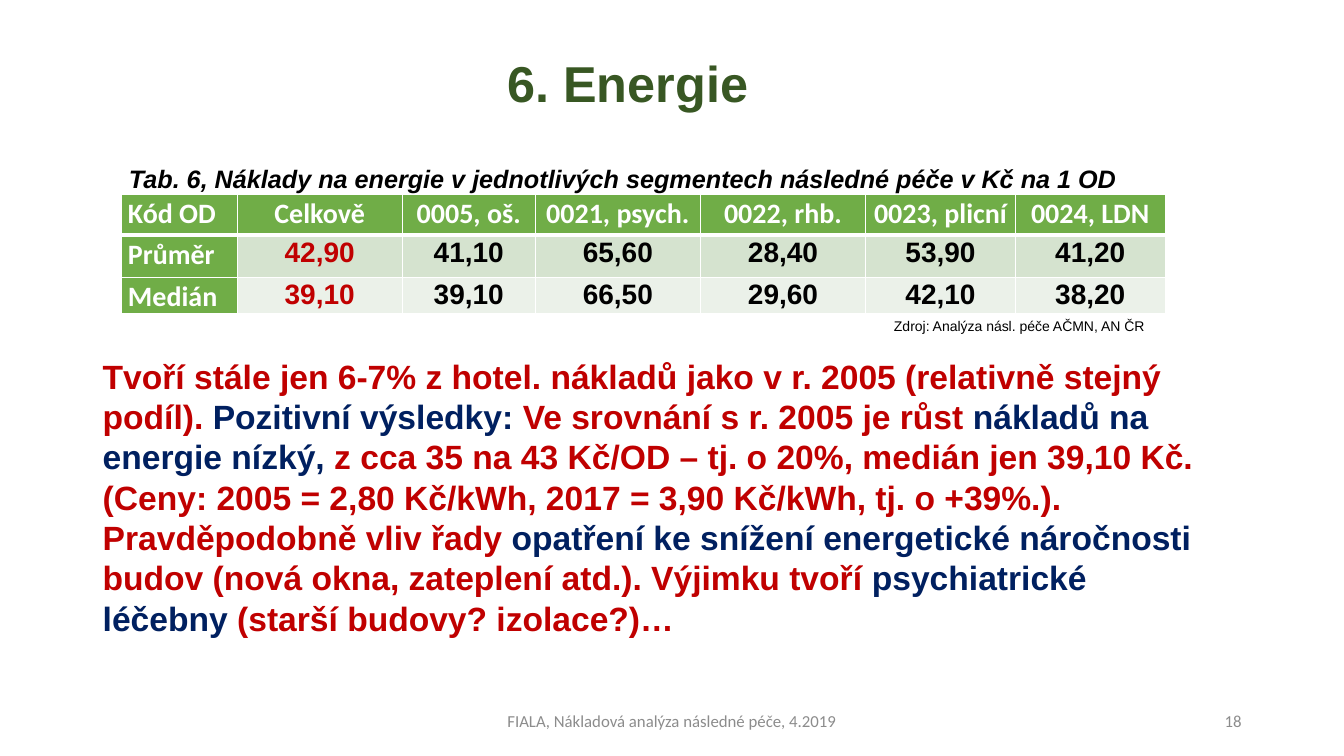
from pptx import Presentation
from pptx.dml.color import RGBColor
from pptx.enum.text import MSO_ANCHOR, PP_ALIGN
from pptx.oxml import parse_xml
from pptx.oxml.ns import nsdecls
from pptx.util import Pt

GREEN, RED, NAVY, BLACK, WHITE, GREY = "70AD47", "C00000", "002060", "000000", "FFFFFF", "8C8C8C"


def colour(value):
    return RGBColor.from_string(value)


def write(para, spans, size, align=PP_ALIGN.LEFT, **style):
    para.alignment = align
    for text, shade in spans:
        span = para.add_run()
        span.text = text
        span.font.color.rgb = colour(shade)
        values = {"name": "Arial", "size": Pt(size), "bold": False, "italic": False} | style
        for name, value in values.items():
            setattr(span.font, name, value)


deck = Presentation()
deck.slide_width, deck.slide_height = Pt(960), Pt(540)
page = deck.slides.add_slide(deck.slide_layouts[5])

title = page.shapes.title
placement = {"left": 47, "top": 29, "width": 803, "height": 65}
for name, value in placement.items():
    setattr(title, name, Pt(value))
title.text_frame.vertical_anchor = MSO_ANCHOR.MIDDLE
heading = title.text_frame.paragraphs[0]
heading.line_spacing = 0.9
write(heading, [("6. Energie", "385723")], 36, PP_ALIGN.CENTER, bold=True)

rows = [
    ["Kód OD", "Celkově", "0005, oš.", "0021, psych.", "0022, rhb.", "0023, plicní", "0024, LDN"],
    ["Průměr", "42,90", "41,10", "65,60", "28,40", "53,90", "41,20"],
    ["Medián", "39,10", "39,10", "66,50", "29,60", "42,10", "38,20"],
]
column_widths = [83, 118, 95, 118, 118, 107, 107]
row_heights = [29, 30, 25]
row_fills = [GREEN, "D5E3CF", "EBF1E9"]
table = page.shapes.add_table(
    3, 7, Pt(86.4), Pt(139), Pt(sum(column_widths)), Pt(sum(row_heights))
).table
for column, width in zip(table.columns, column_widths):
    column.width = Pt(width)
for row, height in zip(table.rows, row_heights):
    row.height = Pt(height)

cell_margins = {"margin_left": 5, "margin_right": 5, "margin_top": 0, "margin_bottom": 0}
for r, values in enumerate(rows):
    for c, value in enumerate(values):
        cell = table.cell(r, c)
        for name, margin in cell_margins.items():
            setattr(cell, name, Pt(margin))
        label = r == 0 or c == 0
        shade = WHITE if label else RED if c == 1 else BLACK
        para = cell.text_frame.paragraphs[0]
        para.line_spacing = 1.07
        write(para, [(value, shade)], 20, PP_ALIGN.CENTER if c else PP_ALIGN.LEFT,
              bold=True, name="Calibri" if label else "Arial")
        properties = cell._tc.get_or_add_tcPr()
        for side in "LRTB":
            thick = (r == 0 and side == "B") or (r == 1 and side == "T")
            properties.append(parse_xml(
                f'<a:ln{side} {nsdecls("a")} w="{Pt(3 if thick else 1)}"><a:solidFill>'
                f'<a:srgbClr val="{WHITE}"/></a:solidFill></a:ln{side}>'
            ))
        cell.fill.solid()
        cell.fill.fore_color.rgb = colour(GREEN if label else row_fills[r])

commentary = [
    [("Tvoří stále jen 6-7% z hotel. nákladů jako v r. 2005 (relativně stejný", RED)],
    [("podíl). ", RED), ("Pozitivní výsledky: ", NAVY),
     ("Ve srovnání s r. 2005 je růst ", RED), ("nákladů na", NAVY)],
    [("energie nízký,", NAVY),
     (" z cca 35 na 43 Kč/OD – tj. o 20%, medián jen 39,10 Kč. "
      "(Ceny: 2005 = 2,80 Kč/kWh, 2017 = 3,90 Kč/kWh, tj. o +39%.). "
      "Pravděpodobně vliv řady ", RED),
     ("opatření ke snížení energetické náročnosti", NAVY),
     (" budov (nová okna, zateplení atd.). Výjimku tvoří ", RED),
     ("psychiatrické léčebny", NAVY), (" (starší budovy? izolace?)…", RED)],
]
caption = "Tab. 6, Náklady na energie v jednotlivých segmentech následné péče v Kč na 1 OD"
source = "Zdroj: Analýza násl. péče AČMN, AN ČR"
footer = "FIALA, Nákladová analýza následné péče, 4.2019"
top, middle = MSO_ANCHOR.TOP, MSO_ANCHOR.MIDDLE
boxes = [
    ((85, 113, 746, 29), top, [[(caption, BLACK)]], {"size": 18, "bold": True, "italic": True}),
    ((631.5, 223.5, 200, 19.5), top, [[(source, BLACK)]],
     {"size": 10, "align": PP_ALIGN.JUSTIFY}),
    ((66.3, 250.5, 811.5, 211), top, commentary, {"size": 24, "bold": True}),
    ((318, 500.5, 324, 29), middle, [[(footer, GREY)]],
     {"size": 12, "align": PP_ALIGN.CENTER, "name": "Calibri"}),
    ((678, 500.5, 216, 29), middle, [[("18", GREY)]],
     {"size": 12, "align": PP_ALIGN.RIGHT, "name": "Calibri"}),
]
for place, anchor, paragraphs, style in boxes:
    frame = page.shapes.add_textbox(*map(Pt, place)).text_frame
    frame.word_wrap = True
    frame.vertical_anchor = anchor
    for index, spans in enumerate(paragraphs):
        para = frame.add_paragraph() if index else frame.paragraphs[0]
        write(para, spans, **style)

deck.save("out.pptx")
